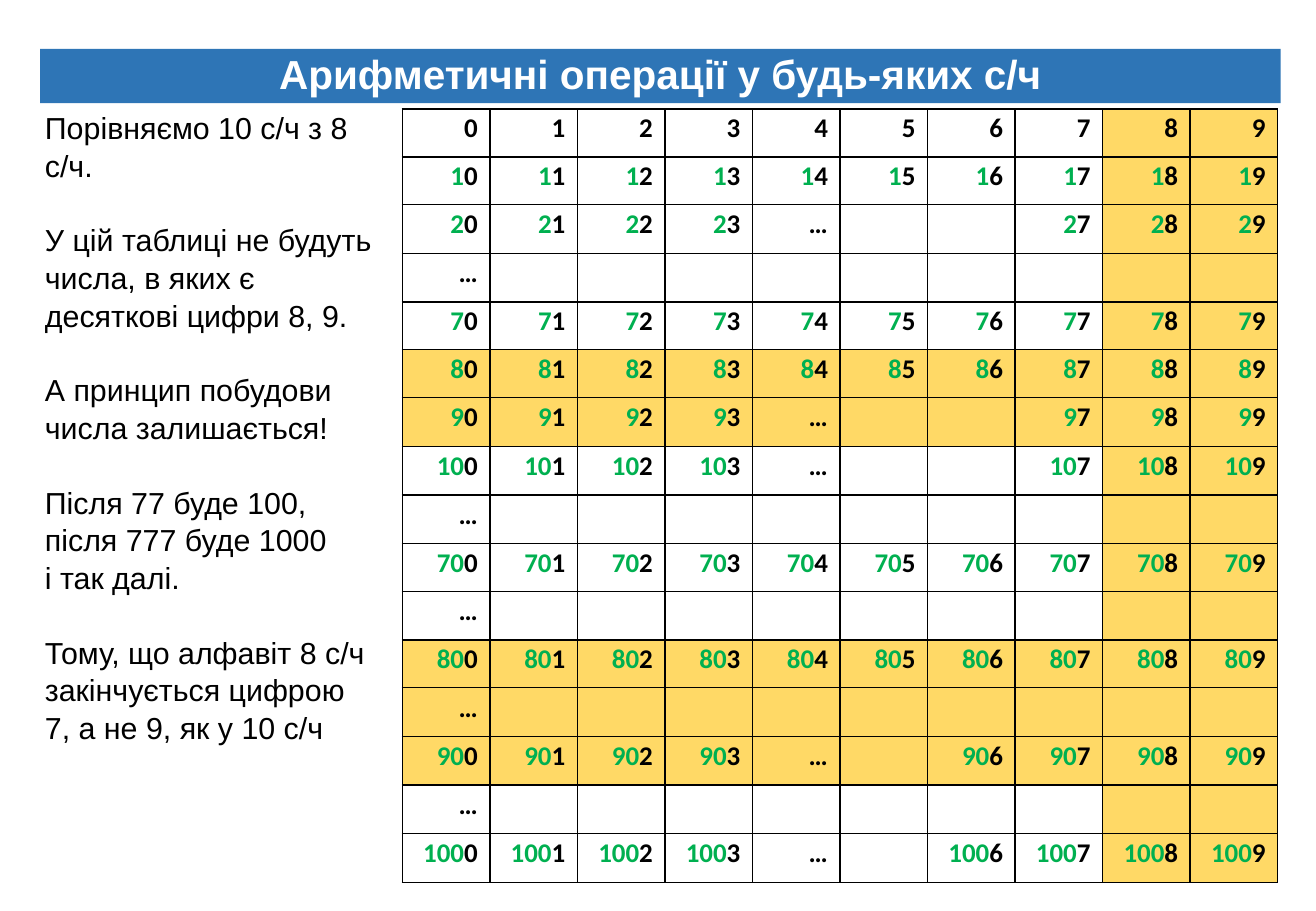
from lxml import etree
from pptx import Presentation
from pptx.dml.color import RGBColor
from pptx.enum import text
from pptx.oxml import ns
from pptx.util import Cm, Pt

BLUE = RGBColor(0x2E, 0x75, 0xB6)
YELLOW = RGBColor(0xFF, 0xD9, 0x66)
GREEN = RGBColor(0x00, 0xB0, 0x50)
BLACK = RGBColor(0x00, 0x00, 0x00)
WHITE = RGBColor(0xFF, 0xFF, 0xFF)

TITLE_FONT = {"name": "Arial", "size": Pt(24), "bold": True}
NOTE_FONT = {"name": "Arial", "size": Pt(18)}
NUMBER_FONT = {"name": "Calibri", "size": Pt(16), "bold": True}
CELL_PARA = {"alignment": text.PP_ALIGN.RIGHT, "line_spacing": 0.5, "space_after": Pt(6)}

BASE = 10
FIRST_EXTRA_DIGIT = 8
ELLIPSIS = "…"

# Each group of lines is set apart from the one above it.
NOTES = [
    ["Порівняємо 10 с/ч з 8 с/ч."],
    ["У цій таблиці не будуть числа, в яких є десяткові цифри 8, 9."],
    ["А принцип побудови числа залишається!"],
    ["Після 77 буде 100,", "після 777 буде 1000", "і так далі."],
    ["Тому, що алфавіт 8 с/ч закінчується цифрою 7, а не 9, як у 10 с/ч"],
]

# Leading digits, columns left out, whether the whole row is excluded in base 8.
FULL = range(0)
TO_SIX = range(4, 7)
TO_FIVE = range(4, 6)
ALL = range(BASE)
ROWS = [
    ("", FULL, False),
    ("1", FULL, False),
    ("2", TO_SIX, False),
    ("", ALL, False),
    ("7", FULL, False),
    ("8", FULL, True),
    ("9", TO_SIX, True),
    ("10", TO_SIX, False),
    ("", ALL, False),
    ("70", FULL, False),
    ("", ALL, False),
    ("80", FULL, True),
    ("", ALL, True),
    ("90", TO_FIVE, True),
    ("", ALL, False),
    ("100", TO_FIVE, False),
]


def apply(target, values):
    for name, value in values.items():
        setattr(target, name, value)


def add_span(para, words, font, color):
    span = para.add_run()
    span.text = words
    apply(span.font, font)
    span.font.color.rgb = color


def add_title(page, words):
    title = page.shapes.title
    apply(title, {"left": Cm(0.84), "top": Cm(1.02), "width": Cm(25.93), "height": Cm(1.14)})
    title.fill.solid()
    title.fill.fore_color.rgb = BLUE
    frame = title.text_frame
    apply(frame, {
        "auto_size": text.MSO_AUTO_SIZE.NONE,
        "vertical_anchor": text.MSO_ANCHOR.BOTTOM,
        "margin_left": Cm(0.2), "margin_right": Cm(0.2),
        "margin_top": Cm(0.1), "margin_bottom": Cm(0.1),
    })
    para = frame.paragraphs[0]
    apply(para, {"alignment": text.PP_ALIGN.CENTER, "line_spacing": 0.9, "space_before": Pt(0)})
    add_span(para, words, TITLE_FONT, WHITE)


def add_notes(page, groups):
    box = page.shapes.add_textbox(Cm(0.69), Cm(2.13), Cm(7.34), Cm(14.1))
    frame = box.text_frame
    frame.word_wrap = True
    para = frame.paragraphs[0]
    for group_index, group in enumerate(groups):
        for line_index, line in enumerate(group):
            if group_index or line_index:
                para = frame.add_paragraph()
            starts_group = group_index > 0 and line_index == 0
            para.space_before = Pt(21.6 if starts_group else 0)
            para.line_spacing = 1.04
            add_span(para, line, NOTE_FONT, BLACK)


def add_borders(cell):
    properties = cell._tc.get_or_add_tcPr()
    for side in ("a:lnL", "a:lnR", "a:lnT", "a:lnB"):
        line = etree.SubElement(properties, ns.qn(side), w=str(Pt(1)))
        fill = etree.SubElement(line, ns.qn("a:solidFill"))
        etree.SubElement(fill, ns.qn("a:srgbClr"), val=str(BLACK))


def fill_cell(cell, prefix, digit, gap, shaded):
    """Write one number, or the ellipsis that opens a gap, and colour the cell."""
    add_borders(cell)
    if shaded:
        cell.fill.solid()
        cell.fill.fore_color.rgb = YELLOW
    else:
        cell.fill.background()
    cell.vertical_anchor = text.MSO_ANCHOR.MIDDLE
    para = cell.text_frame.paragraphs[0]
    apply(para, CELL_PARA)
    if digit not in gap:
        if prefix:
            add_span(para, prefix, NUMBER_FONT, GREEN)
        add_span(para, str(digit), NUMBER_FONT, BLACK)
    elif digit == gap[0]:
        add_span(para, ELLIPSIS, NUMBER_FONT, BLACK)


def add_number_table(page):
    frame = page.shapes.add_table(
        len(ROWS), BASE, Cm(8.41), Cm(2.28), Cm(18.34), Cm(len(ROWS)))
    table = frame.table
    apply(table, {"first_row": False, "horz_banding": False})
    for column in table.columns:
        column.width = Cm(1.83)
    for row_index, (prefix, gap, excluded) in enumerate(ROWS):
        table.rows[row_index].height = Cm(1)
        for digit in range(BASE):
            shaded = excluded or digit >= FIRST_EXTRA_DIGIT
            fill_cell(table.cell(row_index, digit), prefix, digit, gap, shaded)


def main():
    deck = Presentation()
    apply(deck, {"slide_width": Cm(27.51), "slide_height": Cm(19.05)})
    page = deck.slides.add_slide(deck.slide_layouts.get_by_name("Title Only"))
    add_title(page, "Арифметичні операції у будь-яких с/ч")
    add_notes(page, NOTES)
    add_number_table(page)
    deck.save("out.pptx")


if __name__ == "__main__":
    main()
